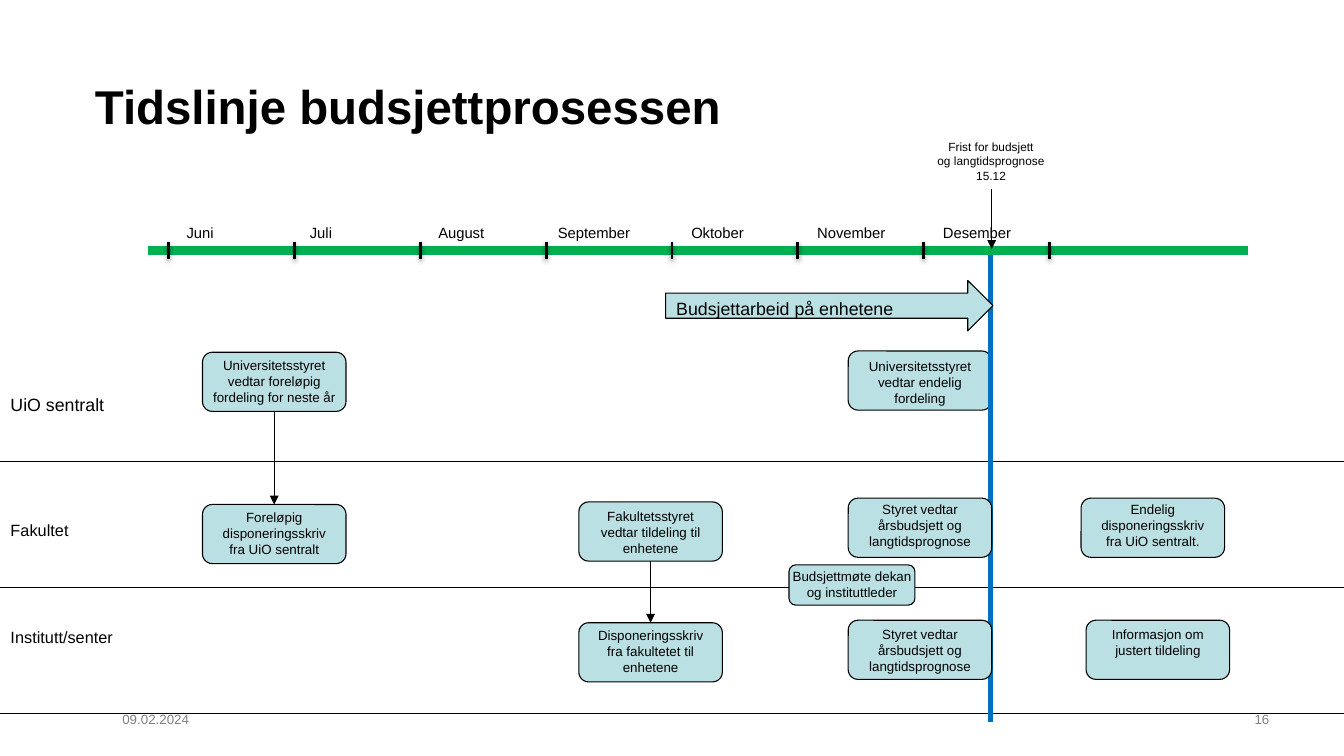
"""Build the budget process timeline slide."""
from dataclasses import dataclass
from typing import NamedTuple, Optional

from lxml import etree
from pptx import Presentation
from pptx import util as u
from pptx.dml.color import RGBColor
from pptx.enum import shapes, text
from pptx.oxml import ns


@dataclass(frozen=True)
class Theme:
    font: str = "Arial"
    ink: str = "000000"
    box: str = "BBE0E3"
    timeline: str = "00B050"
    deadline: str = "0070C0"
    muted: str = "808080"
    title: int = 32
    large: int = 12
    lane: int = 11
    month: int = 10
    small: int = 9
    tiny: int = 8
    hairline: float = 0.75
    tick: float = 2
    thick: float = 3
    bar: float = 6


@dataclass(frozen=True)
class Grid:
    width: float = 12.6
    height: float = 7.09
    left: float = 1.58
    top: float = 4.33
    cell: float = 1.18

    def x(self, col: float) -> int:
        return u.Inches(self.left + col * self.cell)

    def y(self, row: float) -> int:
        return u.Inches(self.top + row * self.cell)

    def size(self, cells: float) -> int:
        return u.Inches(cells * self.cell)


class Area(NamedTuple):
    col: float
    row: float
    cols: float
    rows: float


class Month(NamedTuple):
    name: str
    nudge: float


class Lane(NamedTuple):
    name: str
    row: float
    size: int


class Step(NamedTuple):
    label: str
    col: float
    row: float
    top: float = 0.02
    side: float = 0.12
    cols: float = 1.14
    rows: float = 0.47


T = Theme()
G = Grid()
LEFT, RIGHT = -G.left / G.cell, (G.width - G.left) / G.cell
TIMELINE_ROW = -1.68
DEADLINE_COL = 6.53
CENTER, START, END = text.PP_ALIGN.CENTER, text.PP_ALIGN.LEFT, text.PP_ALIGN.RIGHT

MONTHS = [Month("Juni", 0.06), Month("Juli", 0.04), Month("August", 0.06),
          Month("September", 0.01), Month("Oktober", 0.07),
          Month("November", 0.07), Month("Desember", 0.07)]
LANES = [Lane("UiO sentralt", -0.58, T.large), Lane("Fakultet", 0.42, T.lane),
         Lane("Institutt/senter", 1.27, T.lane)]
BOARD_VOTE = "Styret vedtar årsbudsjett og langtidsprognose"
FINAL = Step("Universitetsstyret vedtar endelig fordeling", 5.4, -0.88, 0.04)
STEPS = {
    "preliminary": Step("Universitetsstyret vedtar foreløpig fordeling for neste år",
                        0.27, -0.87, side=0.02),
    "letter": Step("Foreløpig disponeringsskriv fra UiO sentralt", 0.27, 0.34),
    "faculty": Step("Fakultetsstyret vedtar tildeling til enhetene", 3.26, 0.32, 0.03),
    "units": Step("Disponeringsskriv fra fakultetet til enhetene", 3.26, 1.28, 0.01),
    "faculty budget": Step(BOARD_VOTE, 5.4, 0.29, 0),
    "unit budget": Step(BOARD_VOTE, 5.4, 1.26, 0.03),
    "meeting": Step("Budsjettmøte dekan og instituttleder", 4.93, 0.82, 0.01, 0, 1, 0.32),
    "final letter": Step("Endelig disponeringsskriv fra UiO sentralt.", 7.25, 0.29, 0),
    "information": Step("Informasjon om justert tildeling", 7.29, 1.26, 0.03),
}
FLOWS = [("preliminary", "letter"), ("faculty", "units")]


def write(tf, words: str, size: int, color: str = T.ink, align=START, bold: bool = False,
          anchor=text.MSO_ANCHOR.TOP, wrap: bool = True,
          side: float = 0.1, top: float = 0.05) -> None:
    """Fill a text frame and format its runs."""
    tf.text = words
    tf.word_wrap = wrap
    tf.auto_size = text.MSO_AUTO_SIZE.NONE
    tf.vertical_anchor = anchor
    tf.margin_left = tf.margin_right = u.Inches(side)
    tf.margin_top, tf.margin_bottom = u.Inches(top), 0
    for p in tf.paragraphs:
        p.alignment = align
        for r in p.runs:
            r.font.name, r.font.size, r.font.bold = T.font, u.Pt(size), bold
            r.font.color.rgb = RGBColor.from_string(color)


def place(a: Area) -> tuple[int, int, int, int]:
    """Turn a grid area into slide lengths."""
    return G.x(a.col), G.y(a.row), G.size(a.cols), G.size(a.rows)


def add_label(s, words: str, a: Area, size: int, **style) -> None:
    """Add a text box."""
    write(s.shapes.add_textbox(*place(a)).text_frame, words, size, **style)


def add_filled(s, kind, a: Area):
    """Add an outlined shape in the box colour."""
    sp = s.shapes.add_shape(kind, *place(a))
    sp.shadow.inherit = False
    sp.fill.solid()
    sp.fill.fore_color.rgb = RGBColor.from_string(T.box)
    sp.line.color.rgb = RGBColor.from_string(T.ink)
    sp.line.width = u.Pt(T.hairline)
    return sp


def add_step(s, step: Step):
    """Add a rounded box with its text."""
    sp = add_filled(s, shapes.MSO_SHAPE.ROUNDED_RECTANGLE,
                    Area(step.col, step.row, step.cols, step.rows))
    write(sp.text_frame, step.label, T.small, align=CENTER, side=step.side, top=step.top)
    return sp


def add_line(s, start: tuple[float, float], end: tuple[float, float],
             color: str = T.ink, width: float = T.hairline, arrow: bool = False,
             shadow: bool = False, joins: Optional[tuple] = None) -> None:
    """Draw a straight line, optionally joined from one box down to another."""
    c = s.shapes.add_connector(shapes.MSO_CONNECTOR.STRAIGHT, G.x(start[0]), G.y(start[1]),
                               G.x(end[0]), G.y(end[1]))
    if joins:
        c.begin_connect(joins[0], 2)
        c.end_connect(joins[1], 0)
    c.line.color.rgb = RGBColor.from_string(color)
    c.line.width = u.Pt(width)
    spPr = c._element.spPr
    if arrow:
        etree.SubElement(spPr.find(ns.qn("a:ln")), ns.qn("a:tailEnd"), type="triangle")
    effects = etree.SubElement(spPr, ns.qn("a:effectLst"))
    if shadow:
        outer = etree.SubElement(effects, ns.qn("a:outerShdw"), blurRad="40000",
                                 dist="20000", dir="5400000", rotWithShape="0")
        tint = etree.SubElement(outer, ns.qn("a:srgbClr"), val=T.ink)
        etree.SubElement(tint, ns.qn("a:alpha"), val="38000")


def add_timeline(s) -> None:
    """Draw the month bar with its ticks and labels."""
    add_line(s, (-0.16, TIMELINE_ROW), (8.58, TIMELINE_ROW), T.timeline, T.bar)
    for col in range(len(MONTHS) + 1):
        add_line(s, (col, TIMELINE_ROW - 0.07), (col, TIMELINE_ROW + 0.07),
                 width=T.tick, shadow=True)
    for col, month in enumerate(MONTHS):
        add_label(s, month.name, Area(col + month.nudge, -1.93, 0.78, 0.23), T.month)


def main() -> None:
    """Build and save the slide."""
    prs = Presentation()
    prs.slide_width, prs.slide_height = u.Inches(G.width), u.Inches(G.height)
    s = prs.slides.add_slide(prs.slide_layouts[5])
    title = s.shapes.title
    title.left, title.top, title.width, title.height = place(Area(-0.67, -3.35, 9.25, 1))
    write(title.text_frame, "Tidslinje budsjettprosessen", T.title, bold=True,
          anchor=text.MSO_ANCHOR.MIDDLE)
    for row in range(3):
        add_line(s, (LEFT, row), (RIGHT, row))
    for lane in LANES:
        add_label(s, lane.name, Area(LEFT, lane.row, 1, 0.25), lane.size, wrap=False)
    add_timeline(s)
    add_step(s, FINAL)
    add_line(s, (DEADLINE_COL, -1.64), (DEADLINE_COL, 2.07), T.deadline, T.thick)
    boxes = {key: add_step(s, step) for key, step in STEPS.items()}
    for source, target in FLOWS:
        add_line(s, (0, 0), (0, 1), arrow=True, joins=(boxes[source], boxes[target]))
    work = add_filled(s, shapes.MSO_SHAPE.RIGHT_ARROW, Area(3.95, -1.44, 2.6, 0.4))
    write(work.text_frame, "Budsjettarbeid på enhetene", T.large, top=0.04)
    add_label(s, "Frist for budsjett\nog langtidsprognose\n15.12",
              Area(DEADLINE_COL - 0.51, -2.6, 1.03, 0.42), T.tiny, align=CENTER, wrap=False)
    add_line(s, (DEADLINE_COL + 0.01, -2.17), (DEADLINE_COL + 0.01, -1.69), arrow=True)
    add_label(s, "09.02.2024", Area(-0.45, 1.94, 2.22, 0.39), T.small, color=T.muted)
    add_label(s, "16", Area(8.03, 1.94, 0.8, 0.39), T.small, color=T.muted, align=END)
    prs.save("out.pptx")


if __name__ == "__main__":
    main()
